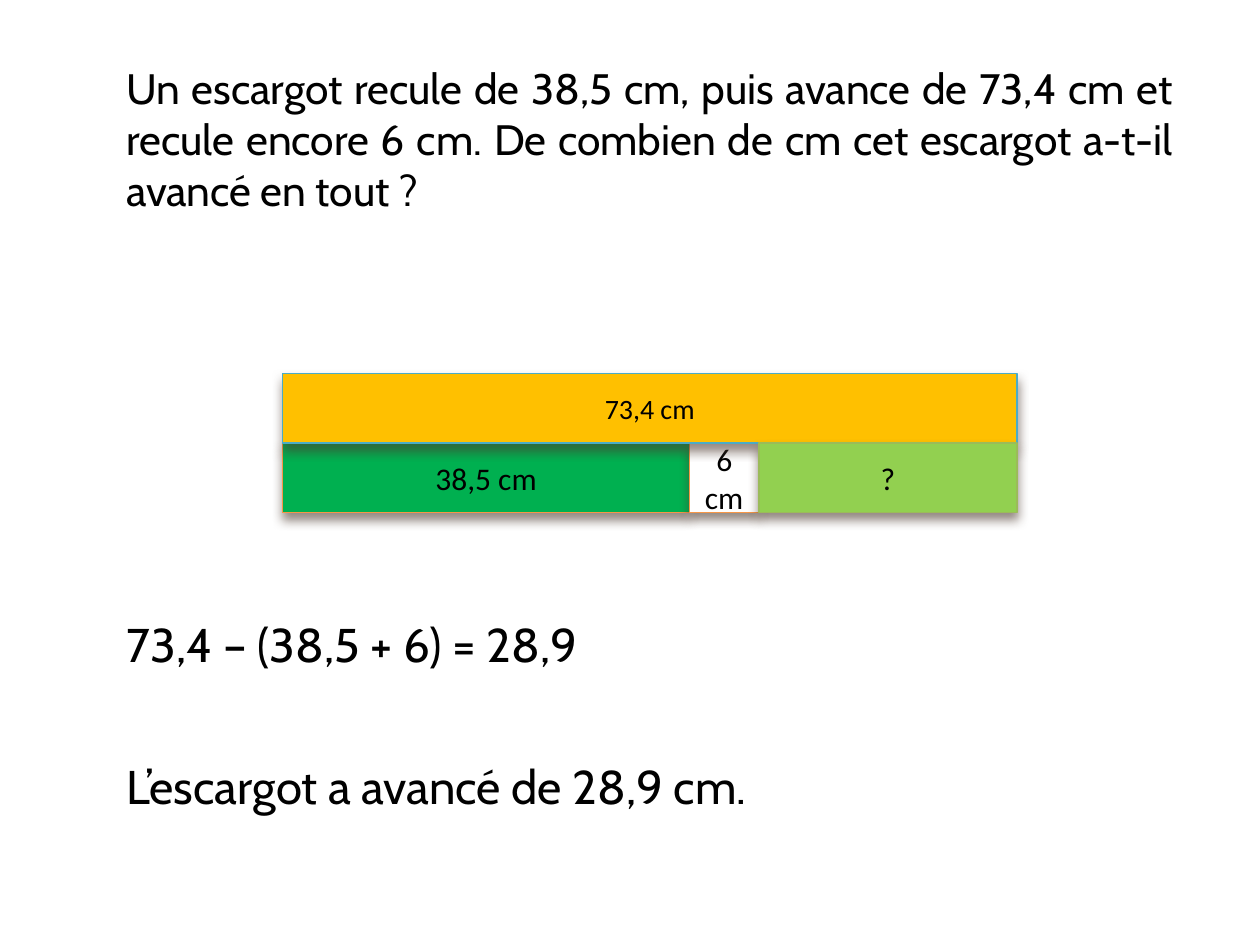
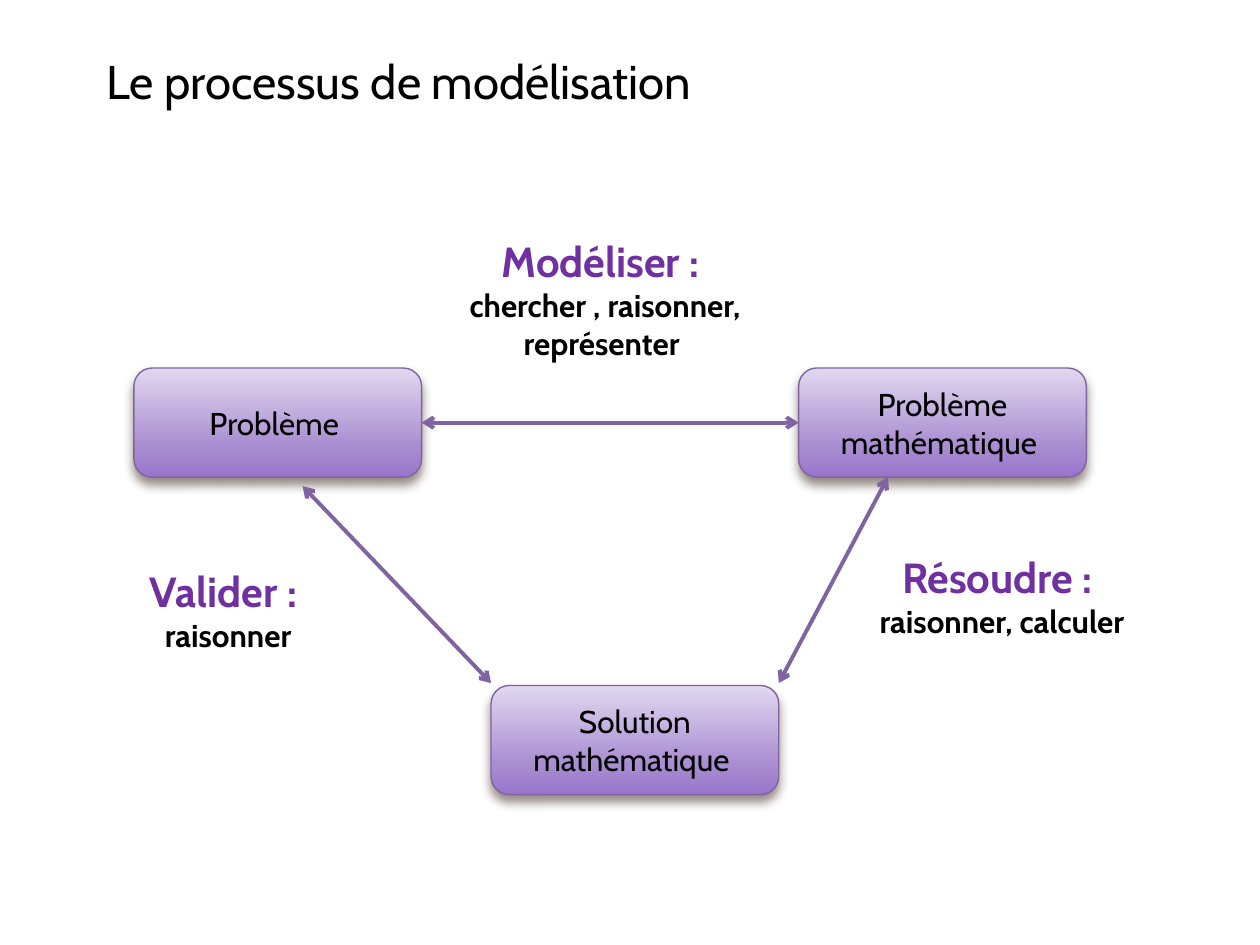
from lxml.etree import SubElement
from pptx import Presentation
from pptx.dml.color import RGBColor
from pptx.enum.shapes import MSO_CONNECTOR, MSO_SHAPE
from pptx.enum.text import MSO_ANCHOR, PP_ALIGN
from pptx.oxml.ns import qn
from pptx.util import Cm, Pt

COLORS = {
    "text": "000000", "accent": "7030A0", "violet": "8064A2",
    "shadow": "4E3B30", "green": "00B050", "white": "FFFFFF",
    "gold": "FFC000", "lime": "92D050", "orange": "F79646",
    "blue": "4BACC6", "olive": "9BBB59",
}
FADE = [(0, "E1D8EF"), (72, "A98DD1"), (100, "9875CB")]
FONT = "Cabin"


def rgb(name):
    return RGBColor.from_string(COLORS[name])


def style(para, size, align, font=FONT, color="text", bold=False):
    para.alignment = align
    for run in para.runs:
        run.font.name = font
        run.font.size = Pt(size)
        run.font.bold = bold
        run.font.color.rgb = rgb(color)


def add_box(slide, left, top, width, height):
    box = slide.shapes.add_textbox(Cm(left), Cm(top), Cm(width), Cm(height))
    box.text_frame.word_wrap = True
    return box.text_frame


def add_text(slide, text, left, top, height, size=27):
    """Justified line of text, centred in its height."""
    frame = add_box(slide, left, top, 21.6, height)
    frame.vertical_anchor = MSO_ANCHOR.MIDDLE
    frame.text = text
    style(frame.paragraphs[0], size, PP_ALIGN.JUSTIFY)


def add_label(slide, title, detail, left, top, height):
    """Coloured heading with the skills below it."""
    frame = add_box(slide, left, top, 6.2, height)
    frame.text = f"{title}\n{detail}"
    head, body = frame.paragraphs
    style(head, 24, PP_ALIGN.CENTER, color="accent", bold=True)
    style(body, 18, PP_ALIGN.CENTER, bold=True)


def add_shadow(shape):
    shape.shadow.inherit = False
    effects = shape._element.spPr.find(qn("a:effectLst"))
    outer = SubElement(effects, qn("a:outerShdw"), blurRad=str(Pt(6)),
                       dist=str(Pt(4)), dir="5400000", rotWithShape="0")
    color = SubElement(outer, qn("a:srgbClr"), val=COLORS["shadow"])
    SubElement(color, qn("a:alpha"), val="60000")


def add_block(slide, kind, text, left, top, width, height, line,
              size=18, font=FONT):
    """Outlined shape with a shadow and centred text; the fill is set later."""
    shape = slide.shapes.add_shape(kind, Cm(left), Cm(top),
                                   Cm(width), Cm(height))
    shape.line.color.rgb = rgb(line)
    shape.line.width = Pt(0.79)
    add_shadow(shape)
    frame = shape.text_frame
    frame.word_wrap = True
    frame.vertical_anchor = MSO_ANCHOR.MIDDLE
    frame.text = text
    style(frame.paragraphs[0], size, PP_ALIGN.CENTER, font)
    return shape


def add_bar(slide, text, left, top, width, fill, line, size=18):
    bar = add_block(slide, MSO_SHAPE.RECTANGLE, text, left, top, width, 1.4,
                    line, size, "Calibri")
    bar.fill.solid()
    bar.fill.fore_color.rgb = rgb(fill)


def add_step(slide, text, left, top):
    step = add_block(slide, MSO_SHAPE.ROUNDED_RECTANGLE, text, left, top,
                     5.8, 2.2, "violet")
    step.fill.gradient()
    step.fill.gradient_angle = 270
    stops = step._element.spPr.find(qn("a:gradFill")).find(qn("a:gsLst"))
    for stop in list(stops):
        stops.remove(stop)
    for place, color in FADE:
        stop = SubElement(stops, qn("a:gs"), pos=str(place * 1000))
        SubElement(stop, qn("a:srgbClr"), val=color)
    return step


def add_arrow(slide, x1=0, y1=0, x2=0, y2=0):
    """Line with an arrowhead at both ends."""
    arrow = slide.shapes.add_connector(MSO_CONNECTOR.STRAIGHT, Cm(x1), Cm(y1),
                                       Cm(x2), Cm(y2))
    arrow.line.color.rgb = rgb("violet")
    arrow.line.width = Pt(2.25)
    line = arrow.line._get_or_add_ln()
    for end in ("a:headEnd", "a:tailEnd"):
        SubElement(line, qn(end), type="arrow")
    SubElement(arrow._element.spPr, qn("a:effectLst"))
    return arrow


def make_snail(slide):
    # Question
    add_text(slide, "Un escargot recule de 38,5 cm, puis avance de 73,4 cm et "
             "recule encore 6 cm. De combien de cm cet escargot a-t-il "
             "avancé en tout ?", 2.3, 0.74, 4.1, 24.3)

    # Bar model: the parts fill the row under the whole
    left, top = 5.7, 7.53
    low = top + 1.4
    back, again, rest = 8.2, 1.4, 5.2
    add_bar(slide, "38,5 cm", left, low, back, "green", "orange")
    add_bar(slide, "6 cm", left + back, low, again, "white", "orange")
    add_bar(slide, "73,4 cm", left, top, back + again + rest,
            "gold", "blue", 16)
    add_bar(slide, "?", left + back + again, low, rest, "lime", "olive")

    # Sum and answer
    add_text(slide, "73,4 – (38,5 + 6) = 28,9", 2.3, 11.33, 3.28)
    add_text(slide, "L’escargot a avancé de 28,9 cm.", 2.3, 14.73, 2.2)


def make_cycle(slide):
    add_text(slide, "Le processus de modélisation", 1.9, 0.33, 2.6)

    # Steps
    start = add_step(slide, "Problème ", 2.7, 7.42)
    model = add_step(slide, "Problème mathématique ", 16.1, 7.42)
    add_step(slide, "Solution mathématique ", 9.9, 13.82)

    # Arrows
    link = add_arrow(slide)
    link.begin_connect(start, 3)
    link.end_connect(model, 1)
    add_arrow(slide, 15.7, 13.77, 17.9, 9.62)
    add_arrow(slide, 6.1, 9.8, 9.9, 13.77)

    # Skills
    add_label(slide, "Modéliser : ", "chercher , raisonner, représenter ",
              9.1, 4.62, 3.58)
    add_label(slide, "Résoudre : ", "raisonner, calculer", 17.1, 11, 2.82)
    add_label(slide, "Valider : ", "raisonner", 1.5, 11.28, 2.06)


def main():
    deck = Presentation()
    deck.slide_width, deck.slide_height = Cm(25.4), Cm(19.05)
    for make in (make_snail, make_cycle):
        make(deck.slides.add_slide(deck.slide_layouts[6]))
    deck.save("out.pptx")


if __name__ == "__main__":
    main()
